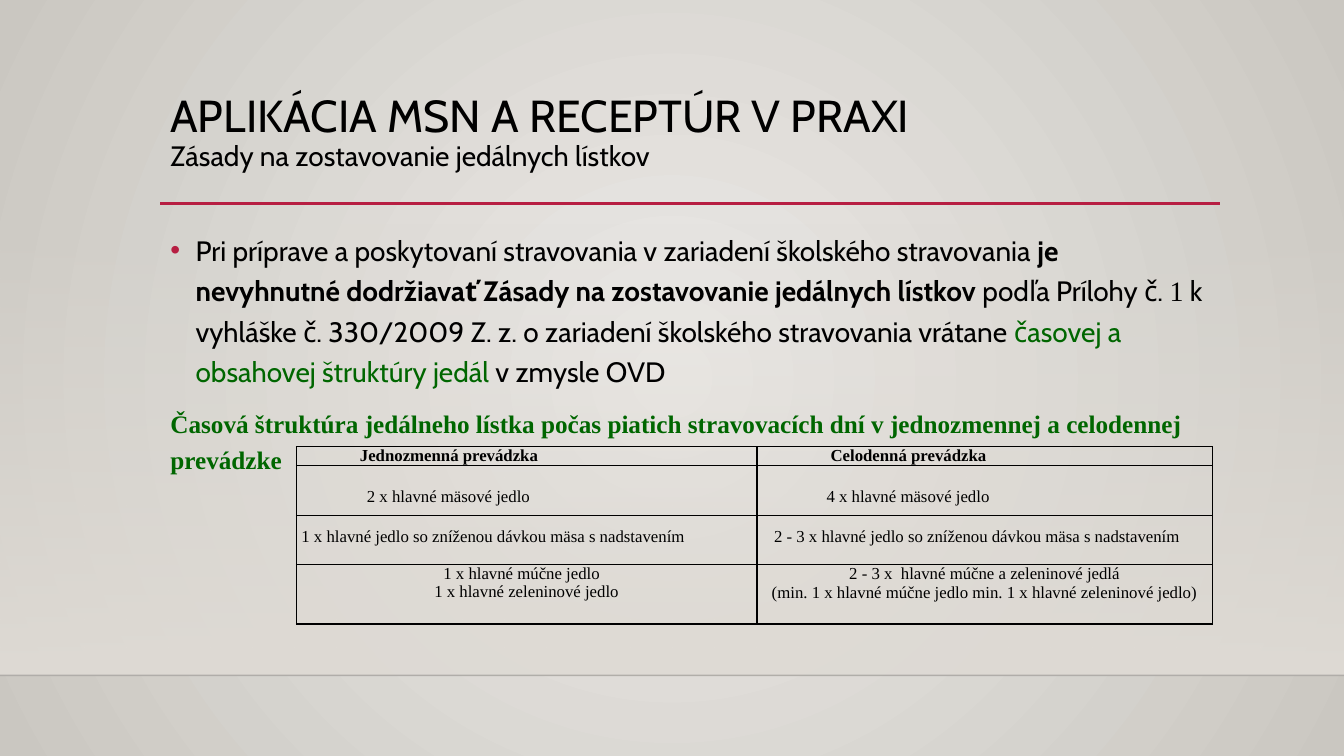
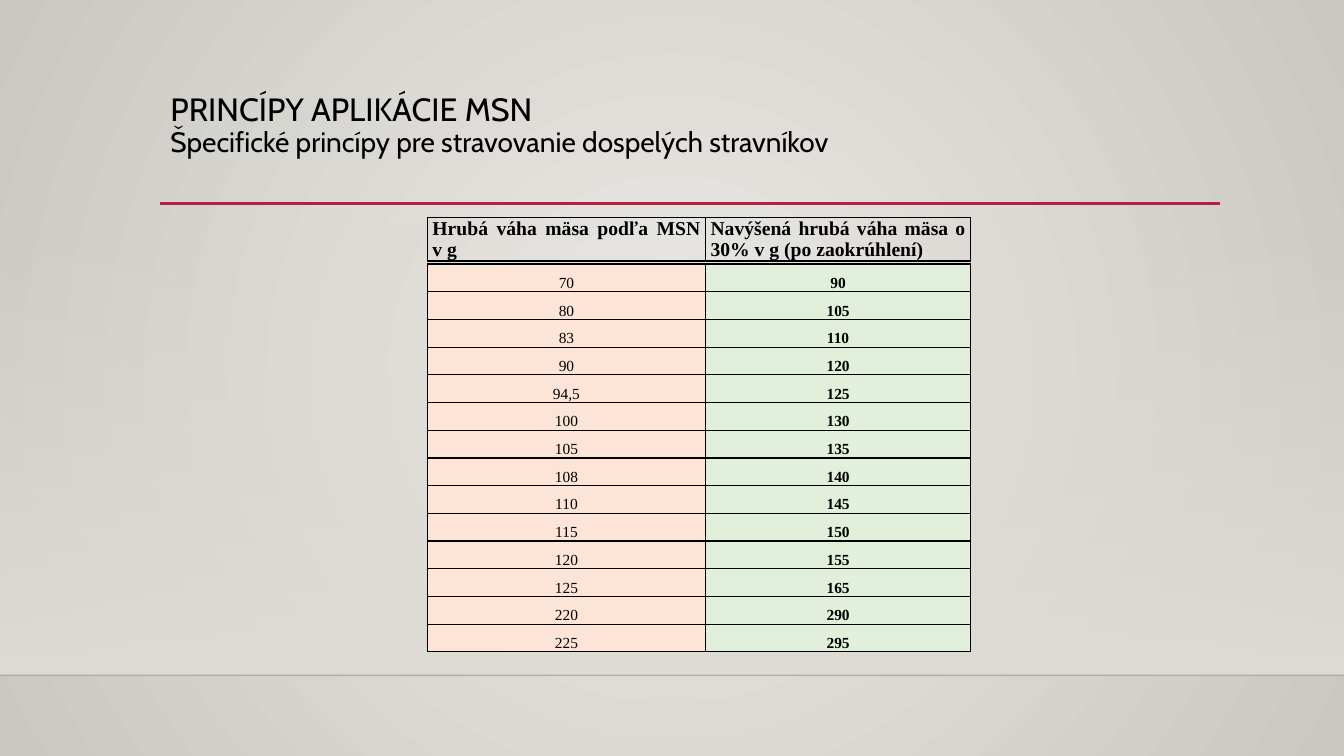
import pptx
import pptx.dml.color
import pptx.enum.shapes
import pptx.enum.text
import pptx.oxml.ns
import pptx.util
from lxml import etree

Pt = pptx.util.Pt
qn = pptx.oxml.ns.qn
ALIGN = pptx.enum.text.PP_ALIGN
ANCHOR = pptx.enum.text.MSO_ANCHOR

# Shared look
TONES = {
    "ink": "000000", "edge": "000001", "rose": "B71E42", "green": "006600",
    "light": "ECEAE7", "dark": "CAC7C1", "floor": "DFDBD5",
    "peach": "FCE4D6", "mint": "E2EFDA",
}
SANS, SERIF = "Cabin", "Times New Roman"
WIDE, HIGH = 960, 540
LEFT, SPAN = 114.5, 756
FLOOR = 482.4

# Content
STEPS = [
    ("70", "90"), ("80", "105"), ("83", "110"), ("90", "120"), ("94,5", "125"),
    ("100", "130"), ("105", "135"), ("108", "140"), ("110", "145"),
    ("115", "150"), ("120", "155"), ("125", "165"), ("220", "290"), ("225", "295"),
]


def shade(name):
    return pptx.dml.color.RGBColor.from_string(TONES[name])


def node(root, tag, **attrs):
    return etree.SubElement(root, qn(tag), attrs)


def write(frame, text, size=20, face=SANS, tone="ink", bold=False,
          align=ALIGN.LEFT, lead=1.0, gap=0, left=0, hang=0, mark=None):
    """Add a paragraph; text is a string or a list of (string, changes)."""
    par = frame.paragraphs[0]
    if par.runs:
        par = frame.add_paragraph()
    props = par._p.get_or_add_pPr()
    props.set("marL", str(Pt(left)))
    props.set("indent", str(Pt(hang)))
    if mark:
        node(node(props, "a:buClr"), "a:srgbClr", val=TONES["rose"])
        node(props, "a:buFont", typeface="Arial")
        node(props, "a:buChar", char=mark)
    else:
        node(props, "a:buNone")
    par.alignment, par.line_spacing, par.space_before = align, lead, Pt(gap)
    base = {"size": size, "face": face, "tone": tone, "bold": bold}
    for part, change in [(text, {})] if isinstance(text, str) else text:
        if part == "\n":
            par.add_line_break()
            continue
        look = {**base, **change}
        run = par.add_run()
        run.text = part
        run.font.size = Pt(look["size"])
        run.font.name = look["face"]
        run.font.bold = look["bold"]
        run.font.color.rgb = shade(look["tone"])


def place(item, left, top, width, height):
    item.left, item.top = Pt(left), Pt(top)
    item.width, item.height = Pt(width), Pt(height)
    frame = item.text_frame
    frame.word_wrap = True
    frame.auto_size = pptx.enum.text.MSO_AUTO_SIZE.NONE
    frame.vertical_anchor = ANCHOR.TOP
    return frame


def head(slide, first, size, second):
    frame = place(slide.shapes.title, LEFT, 63.4, SPAN, 82.8)
    write(frame, [(first, {"size": size}), ("\n", {}), (second, {})], lead=0.9)


def blend(fill, start, end):
    fill.gradient()
    for stop, name in zip(fill.gradient_stops, (start, end)):
        stop.color.rgb = shade(name)


def rule(slide, left, right, top, tone, width):
    line = slide.shapes.add_connector(
        pptx.enum.shapes.MSO_CONNECTOR.STRAIGHT, Pt(left), Pt(top), Pt(right), Pt(top))
    line.line.color.rgb = shade(tone)
    line.line.width = Pt(width)
    node(line._element.spPr, "a:effectLst")
    return line


def dress(deck, slide):
    """Give the master its background, floor band and rules."""
    master = deck.slide_master
    back = master.background.fill
    blend(back, "light", "dark")
    grad = master._element.find(".//" + qn("a:gradFill"))
    grad.remove(grad.find(qn("a:lin")))
    ring = node(grad, "a:path", path="circle")
    node(ring, "a:fillToRect", l="50000", t="50000", r="50000", b="50000")

    band = slide.shapes.add_shape(
        pptx.enum.shapes.MSO_SHAPE.RECTANGLE, 0, Pt(159), Pt(WIDE), Pt(FLOOR - 159))
    band.shadow.inherit = False
    band.line.fill.background()
    blend(band.fill, "floor", "floor")
    band.fill.gradient_angle = 270
    node(band._element.find(".//" + qn("a:srgbClr")), "a:alpha", val="0")

    edge = rule(slide, 0, WIDE, FLOOR, "edge", 1)
    node(edge._element.find(".//" + qn("a:srgbClr")), "a:alpha", val="20000")
    bar = rule(slide, LEFT, 871.2, 145.4, "rose", 2.5)

    # Move the parts behind the master's placeholders
    tree = master.shapes._spTree
    for spot, part in enumerate((band, edge, bar)):
        part._element.find(".//" + qn("p:cNvPr")).set("id", str(100 + spot))
        tree.insert(2 + spot, part._element)


def grid(slide, left, top, cols, rows):
    table = slide.shapes.add_table(
        len(rows), len(cols), Pt(left), Pt(top), Pt(sum(cols)), Pt(sum(rows))).table
    table.first_row = table.horz_banding = False
    for col, width in zip(table.columns, cols):
        col.width = Pt(width)
    for row, height in zip(table.rows, rows):
        row.height = Pt(height)
    return table


def box(cell, fill=None, side=0, top=0, anchor=ANCHOR.TOP):
    """Format one cell and return its text frame."""
    cell.margin_left = cell.margin_right = Pt(side)
    cell.margin_top, cell.margin_bottom = Pt(top), 0
    cell.vertical_anchor = anchor
    if fill:
        cell.fill.solid()
        cell.fill.fore_color.rgb = shade(fill)
    else:
        cell.fill.background()
    props = cell._tc.get_or_add_tcPr()
    for spot, tag in enumerate(("a:lnL", "a:lnR", "a:lnT", "a:lnB")):
        line = etree.Element(qn(tag), {"w": str(Pt(1))})
        node(node(line, "a:solidFill"), "a:srgbClr", val=TONES["ink"])
        props.insert(spot, line)
    return cell.text_frame


def menus(slide):
    head(slide, "APLIKÁCIA MSN A RECEPTÚR V PRAXI ", 32,
         "Zásady na zostavovanie jedálnych lístkov")
    body = place(slide.placeholders[1], LEFT, 158.4, SPAN, 318.2)
    write(body, [
        ("Pri príprave a poskytovaní stravovania v zariadení školského stravovania ", {}),
        ("je nevyhnutné dodržiavať Zásady na zostavovanie jedálnych lístkov ", {"bold": True}),
        ("podľa Prílohy č. ", {}),
        ("1", {"face": SERIF}),
        (" k vyhláške č. 330/2009 Z. z. o zariadení školského stravovania vrátane ", {}),
        ("časovej a obsahovej štruktúry jedál", {"tone": "green"}),
        (" v zmysle OVD", {}),
    ], lead=1.2, left=18, hang=-18, mark="•")
    write(body, "Časová štruktúra jedálneho lístka počas piatich stravovacích dní "
          "v jednozmennej a celodennej prevádzke",
          size=18, face=SERIF, tone="green", bold=True, lead=1.2, gap=10)

    # Each row: top margin, then text and left indent of both cells
    table = grid(slide, 211.7, 319, (329, 325.4), (13.7, 35.3, 35.3, 42.5))
    lines = [
        (0, ("Jednozmenná prevádzka", 45.4), ("Celodenná prevádzka", 52.6)),
        (15.5, ("2 x hlavné mäsové jedlo", 50.4), ("4 x hlavné mäsové jedlo", 49.7)),
        (8.5, ("1 x hlavné jedlo so zníženou dávkou mäsa s nadstavením", 3.6),
         ("2 - 3 x hlavné jedlo so zníženou dávkou mäsa s nadstavením", 12.2)),
    ]
    for row, (top, *pair) in enumerate(lines):
        for col, (text, left) in enumerate(pair):
            write(box(table.cell(row, col), top=top), text,
                  size=12, face=SERIF, bold=row == 0, left=left)
    last = {"size": 12, "face": SERIF}
    cell = box(table.cell(3, 0))
    write(cell, "1 x hlavné múčne jedlo", lead=Pt(13), left=105, **last)
    write(cell, "1 x hlavné zeleninové jedlo", align=ALIGN.CENTER, **last)
    cell = box(table.cell(3, 1))
    for text in ("2 - 3 x  hlavné múčne a zeleninové jedlá",
                 "(min. 1 x hlavné múčne jedlo min. 1 x hlavné zeleninové jedlo)"):
        write(cell, text, align=ALIGN.CENTER, lead=Pt(13.4), **last)


def weights(slide):
    head(slide, "PRINCÍPY APLIKÁCIE MSN", 23,
         "Špecifické princípy pre stravovanie dospelých stravníkov")
    cols = (198.7, 189.4)
    cell = {"side": 3.6, "anchor": ANCHOR.BOTTOM}

    # Values
    table = grid(slide, 305.3, 188.6, cols, [19.8] * len(STEPS))
    for row, pair in enumerate(STEPS):
        for col, text in enumerate(pair):
            fill = ("peach", "mint")[col]
            write(box(table.cell(row, col), fill=fill, **cell), text,
                  size=11, face=SERIF, bold=col == 1, align=ALIGN.CENTER)

    # Heading
    table = grid(slide, 305.3, 155.4, cols, [30.2])
    for col, text in enumerate(("Hrubá váha mäsa podľa MSN v g",
                                "Navýšená hrubá váha mäsa o 30% v g (po zaokrúhlení)")):
        write(box(table.cell(0, col), **cell), text,
              size=14, face=SERIF, bold=True, align=ALIGN.JUSTIFY)


def main():
    deck = pptx.Presentation()
    deck.slide_width, deck.slide_height = Pt(WIDE), Pt(HIGH)
    first = deck.slides.add_slide(deck.slide_layouts[1])
    dress(deck, first)
    menus(first)
    weights(deck.slides.add_slide(deck.slide_layouts[5]))
    deck.save("out.pptx")


if __name__ == "__main__":
    main()
